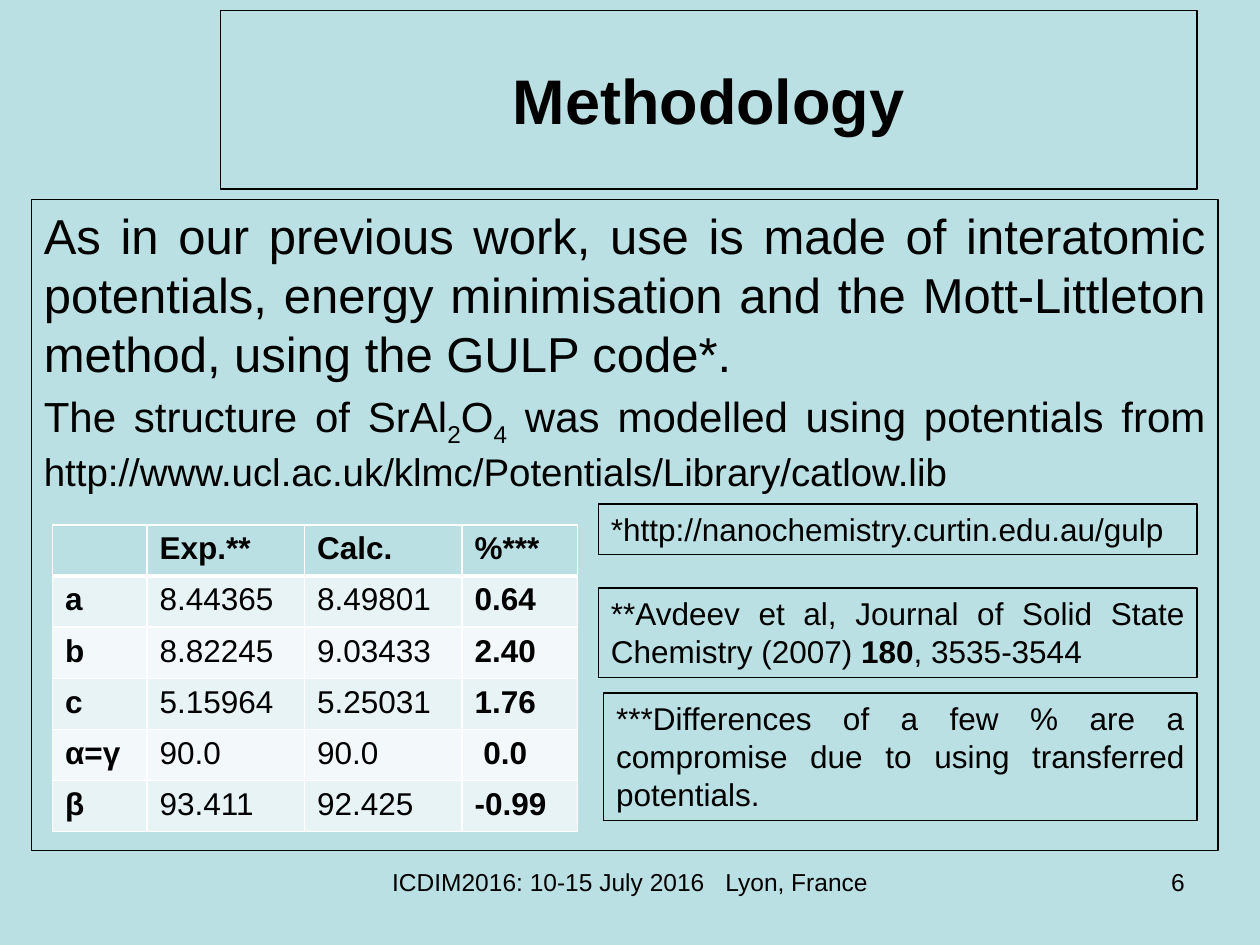
from lxml import etree
from pptx import Presentation
from pptx.dml.color import RGBColor
from pptx.enum import shapes, text
from pptx.oxml import ns
from pptx.util import Pt

BLACK = RGBColor(0x00, 0x00, 0x00)
PALE_TEAL = RGBColor(0xBB, 0xE0, 0xE3)
BANDS = (RGBColor(0xE7, 0xF3, 0xF4), RGBColor(0xF3, 0xF9, 0xFA))
BORDER = "FFFFFF"
FONT = "Arial"
LEFT, CENTER, RIGHT, JUSTIFY = (text.PP_ALIGN.LEFT, text.PP_ALIGN.CENTER,
                                text.PP_ALIGN.RIGHT, text.PP_ALIGN.JUSTIFY)

# Content: a paragraph is a list of (wording, size, style) runs
TITLE = [[("Methodology", 36, "bold")]]
BODY = [
    [("As in our previous work, use is made of interatomic potentials, energy "
      "minimisation and the Mott-Littleton method, using the GULP code*.", 28, "")],
    [("The structure of SrAl", 24, ""), ("2", 24, "sub"), ("O", 24, ""),
     ("4", 24, "sub"), (" was modelled using potentials from ", 24, ""),
     ("http://www.ucl.ac.uk/klmc/Potentials/Library/catlow.lib", 22, "")],
]
NOTES = [  # (left, top, width, height), paragraphs
    ((342, 288, 342, 29), [[("*http://nanochemistry.curtin.edu.au/gulp", 18, "")]]),
    ((342, 336, 342, 51), [[
        ("**Avdeev et al, Journal of Solid State Chemistry (2007) ", 18, ""),
        ("180", 18, "bold"), (", 3535-3544", 18, "")]]),
    ((345, 396, 339, 73), [[("***Differences of a few % are a compromise due to "
                             "using transferred potentials.", 18, "")]]),
]
FOOTER = [[("ICDIM2016: 10-15 July 2016", 14, ""), (" ", 14, "wide"),
           ("Lyon, France", 14, "")]]
PAGE_NUMBER = [[("6", 14, "")]]
LATTICE = [
    ("", "Exp.**", "Calc.", "%***"),
    ("a", "8.44365", "8.49801", "0.64"),
    ("b", "8.82245", "9.03433", "2.40"),
    ("c", "5.15964", "5.25031", "1.76"),
    ("α=γ", "90.0", "90.0", " 0.0"),
    ("β", "93.411", "92.425", "-0.99"),
]
COLUMN_WIDTHS = (54, 90, 90, 66)
ROW_HEIGHT = 29.2


def write(frame, paragraphs, align):
    frame.word_wrap = True
    for index, runs in enumerate(paragraphs):
        para = frame.add_paragraph() if index else frame.paragraphs[0]
        para.alignment = align
        para.space_before = Pt(5 if index else 0)
        for wording, size, style in runs:
            span = para.add_run()
            span.text = wording
            span.font.name, span.font.size = FONT, Pt(size)
            span.font.bold = style == "bold"
            span.font.color.rgb = BLACK
            if style == "sub":
                span._r.get_or_add_rPr().set("baseline", "-25000")
            elif style == "wide":
                span._r.get_or_add_rPr().set("spc", "780")


def outline(box):
    box.line.color.rgb = BLACK
    box.line.width = Pt(0.75)


def add_text(page, place, paragraphs, align, outlined=False):
    box = page.shapes.add_textbox(*map(Pt, place))
    write(box.text_frame, paragraphs, align)
    if outlined:
        outline(box)


def set_borders(cell, top, bottom):
    properties = cell._tc.get_or_add_tcPr()
    widths = (("lnL", 1), ("lnR", 1), ("lnT", top), ("lnB", bottom))
    for position, (tag, width) in enumerate(widths):
        edge = etree.Element(ns.qn("a:" + tag), w=str(Pt(width)))
        fill = etree.SubElement(edge, ns.qn("a:solidFill"))
        etree.SubElement(fill, ns.qn("a:srgbClr"), val=BORDER)
        properties.insert(position, edge)


def add_lattice_table(page):
    table = page.shapes.add_table(
        len(LATTICE), len(COLUMN_WIDTHS), Pt(30), Pt(300),
        Pt(sum(COLUMN_WIDTHS)), Pt(ROW_HEIGHT * len(LATTICE))).table
    for column, width in zip(table.columns, COLUMN_WIDTHS):
        column.width = Pt(width)
    for r, values in enumerate(LATTICE):
        table.rows[r].height = Pt(ROW_HEIGHT)
        for c, value in enumerate(values):
            cell = table.cell(r, c)
            cell.fill.solid()
            cell.fill.fore_color.rgb = BANDS[(r - 1) % 2] if r else PALE_TEAL
            set_borders(cell, 3 if r == 1 else 1, 1 if r else 3)
            style = "bold" if r == 0 or c in (0, 3) else ""
            write(cell.text_frame, [[(value, 18, style)]], LEFT)


def main():
    deck = Presentation()
    deck.slide_width, deck.slide_height = Pt(720), Pt(540)
    page = deck.slides.add_slide(deck.slide_layouts[5])
    page.background.fill.solid()
    page.background.fill.fore_color.rgb = PALE_TEAL

    # Title
    title = page.shapes.title
    title.left, title.top, title.width, title.height = map(Pt, (126, 6, 558, 102))
    title.text_frame.vertical_anchor = text.MSO_ANCHOR.MIDDLE
    write(title.text_frame, TITLE, CENTER)
    outline(title)

    # Body and footer
    add_text(page, (18, 114, 678, 372), BODY, JUSTIFY, outlined=True)
    add_text(page, (216, 492, 288, 24.5), FOOTER, CENTER)
    add_text(page, (516, 492, 168, 37.5), PAGE_NUMBER, RIGHT)

    # Lattice parameters and their notes
    add_lattice_table(page)
    for place, paragraphs in NOTES:
        add_text(page, place, paragraphs, JUSTIFY, outlined=True)

    deck.save("out.pptx")


if __name__ == "__main__":
    main()
